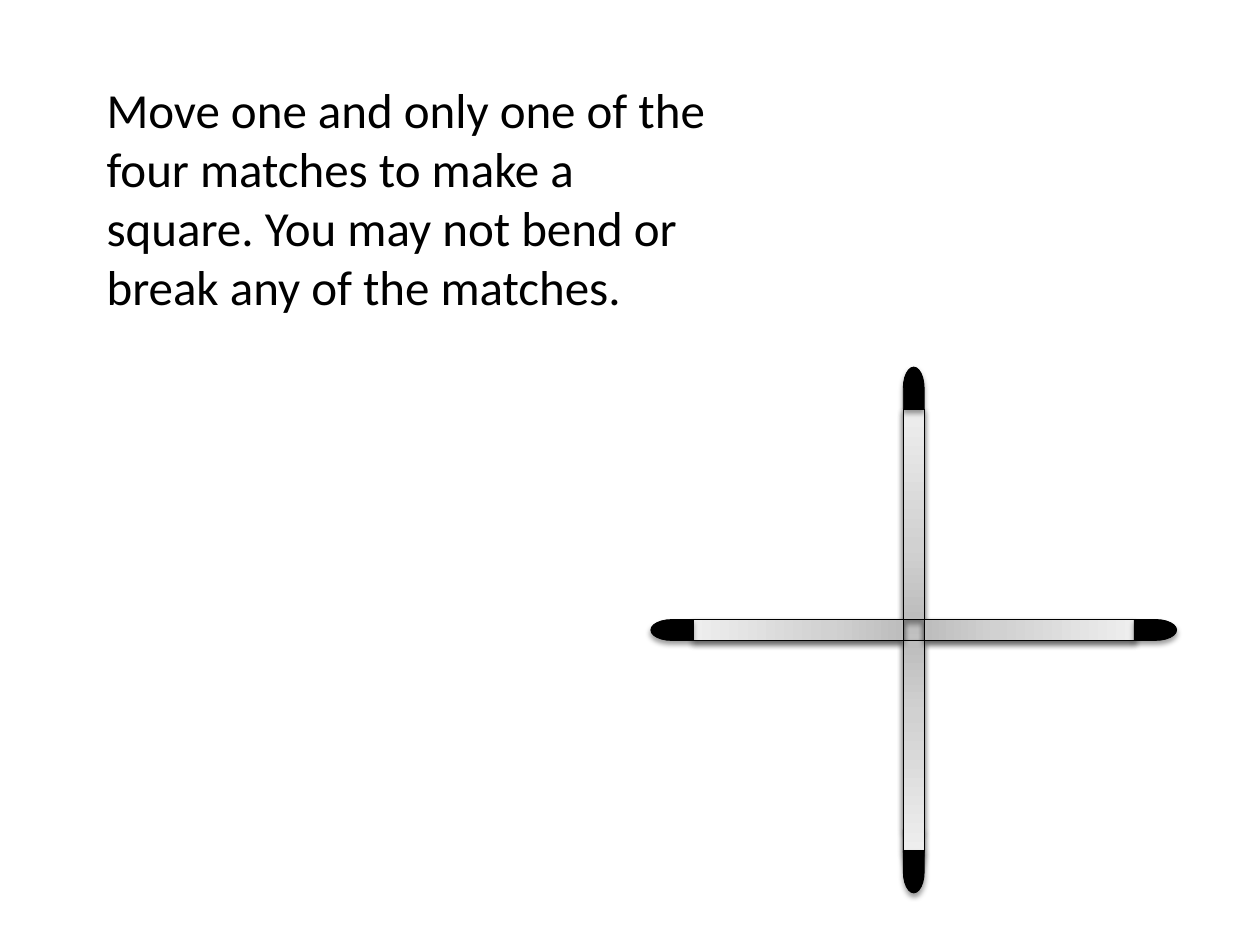
from lxml import etree
from pptx import Presentation
from pptx.dml.color import RGBColor
from pptx.enum.shapes import MSO_SHAPE as SHAPE
from pptx.enum.text import MSO_AUTO_SIZE as AUTO_SIZE
from pptx.oxml import parse_xml
from pptx.oxml.ns import nsdecls, qn
from pptx.util import Cm, Pt

PUZZLE = ("Move one and only one of the four matches to make a square. "
          "You may not bend or break any of the matches.")
WOOD = [(0, "BDBDBD"), (35, "D1D1D1"), (100, "EEEEEE")]
BLACK = "000000"

# Heading of each match: x step, y step, clockwise turn from pointing up
UP, DOWN, RIGHT, LEFT = (0, -1, 0), (0, 1, 180), (1, 0, 90), (-1, 0, 270)

CENTER_X, CENTER_Y = 18.42, 12.7
THICK, STICK, HEAD = 0.42, 4.24, 0.85
STICK_REACH = (THICK + STICK) / 2
HEAD_REACH = THICK / 2 + STICK + HEAD / 2

# Heading, gap to the usual place, has a head
UNDER = [(UP, 0, False), (DOWN, -THICK, True), (RIGHT, 0, False), (LEFT, 0, False)]
OVER = [(UP, 0, True), (DOWN, 0, True), (RIGHT, 0, True), (LEFT, 0, True)]


def rgb(color):
    return RGBColor.from_string(color)


def add_shadow(sp, blur):
    sp.shadow.inherit = False
    effects = sp._element.spPr.find(qn("a:effectLst"))
    outer = etree.SubElement(effects, qn("a:outerShdw"), blurRad=str(Pt(blur)),
                             dist=str(Pt(2)), dir="5400000", rotWithShape="0")
    color = etree.SubElement(outer, qn("a:srgbClr"), val=BLACK)
    etree.SubElement(color, qn("a:alpha"), val="38000")


def fill_wood(sp):
    """Fill with a gradient that runs from the inner end to the head."""
    stops = "".join(f'<a:gs pos="{pos * 1000}"><a:srgbClr val="{color}"/></a:gs>'
                    for pos, color in WOOD)
    sp._element.spPr.find(qn("a:prstGeom")).addnext(parse_xml(
        f'<a:gradFill {nsdecls("a")} rotWithShape="1"><a:gsLst>{stops}</a:gsLst>'
        '<a:lin ang="16200000" scaled="0"/></a:gradFill>'))


def add_part(group, kind, heading, reach, w, h, turn, blur):
    """Add one part of a match, centred at a distance from the crossing."""
    dx, dy, _ = heading
    x, y = CENTER_X + dx * reach, CENTER_Y + dy * reach
    sp = group.shapes.add_shape(kind, Cm(x - w / 2), Cm(y - h / 2), Cm(w), Cm(h))
    sp.rotation = turn % 360
    sp.line.color.rgb = rgb(BLACK)
    sp.line.width = Pt(0.5)
    add_shadow(sp, blur)
    return sp


def add_matches(s, matches):
    group = s.shapes.add_group_shape()
    for heading, gap, has_head in matches:
        turn = heading[2]
        stick = add_part(group, SHAPE.RECTANGLE, heading, STICK_REACH + gap,
                         THICK, STICK, turn, 3.5)
        fill_wood(stick)
        if has_head:
            head = add_part(group, SHAPE.FLOWCHART_DELAY, heading, HEAD_REACH + gap,
                            HEAD, THICK, turn - 90, 3.1)
            head.fill.solid()
            head.fill.fore_color.rgb = rgb(BLACK)


def add_puzzle_text(s):
    tf = s.shapes.add_textbox(Cm(1.9), Cm(1.48), Cm(12.7), Cm(5.05)).text_frame
    tf.word_wrap = True
    tf.auto_size = AUTO_SIZE.SHAPE_TO_FIT_TEXT
    r = tf.paragraphs[0].add_run()
    r.text = PUZZLE
    r.font.name = "Calibri"
    r.font.size = Pt(28)
    r.font.color.rgb = rgb(BLACK)


def main():
    prs = Presentation()
    prs.slide_width, prs.slide_height = Cm(25.4), Cm(19.05)
    s = prs.slides.add_slide(prs.slide_layouts[6])
    add_matches(s, UNDER)
    add_puzzle_text(s)
    add_matches(s, OVER)
    prs.save("out.pptx")


if __name__ == "__main__":
    main()
